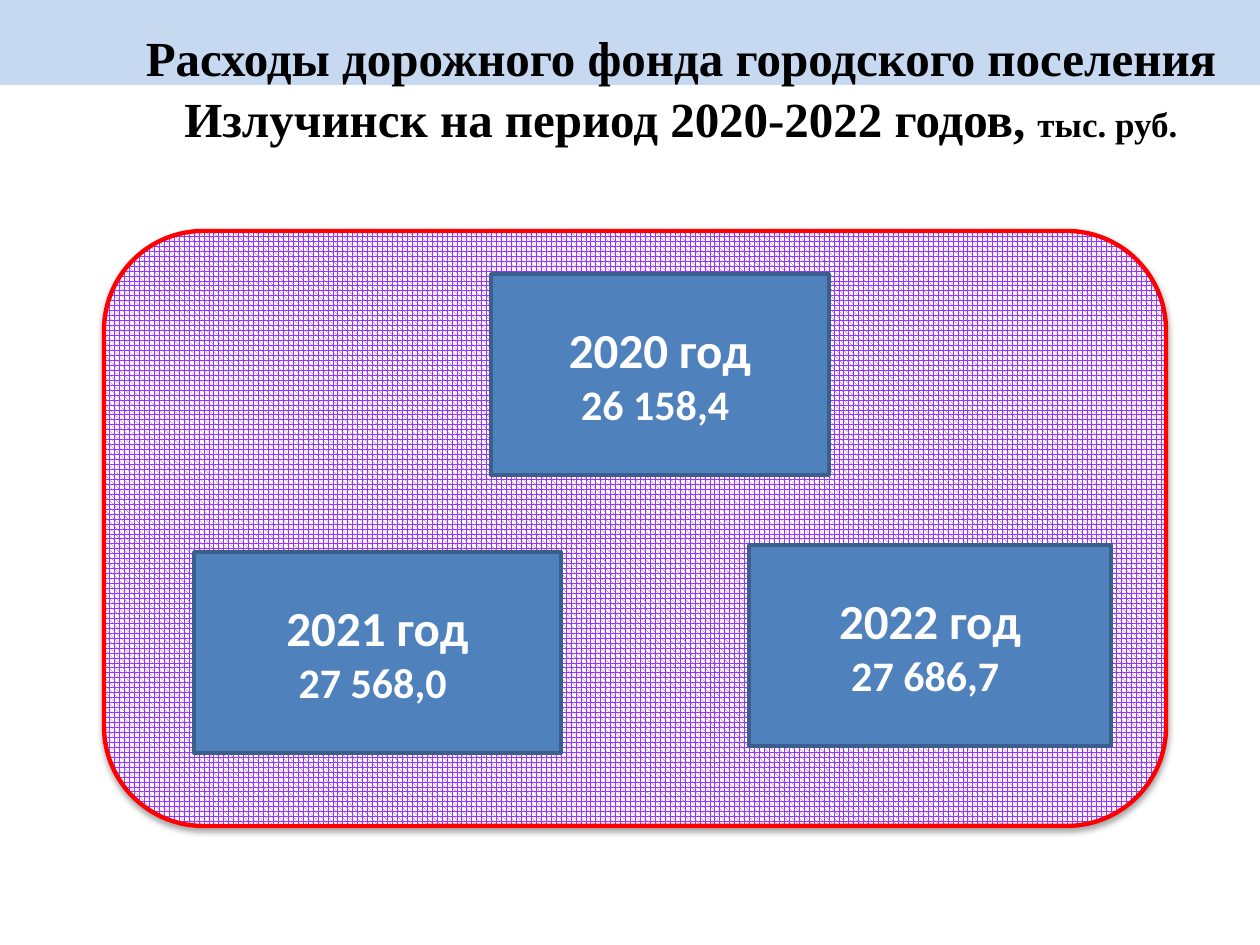
from lxml import etree
from pptx import Presentation
from pptx.dml.color import RGBColor
from pptx.enum.dml import MSO_PATTERN
from pptx.enum.shapes import MSO_SHAPE
from pptx.enum.text import MSO_ANCHOR, PP_ALIGN
from pptx.oxml import parse_xml
from pptx.util import Pt

RECTANGLE = MSO_SHAPE.RECTANGLE
ROUNDED = MSO_SHAPE.ROUNDED_RECTANGLE
SPHERE = MSO_PATTERN.SPHERE
MIDDLE = MSO_ANCHOR.MIDDLE
CENTER = PP_ALIGN.CENTER
EMU_PER_PX = 914400 / 126

COLORS = {
    "band": "C6D9F1",
    "pattern": "9933FF",
    "white": "FFFFFF",
    "black": "000000",
    "frame": "FF0000",
    "card": "4F81BD",
    "card_line": "3A5F8C",
}


def px(*lengths):
    return [round(length * EMU_PER_PX) for length in lengths]


def add_text(para, text, *, size, font, color):
    para.alignment = CENTER
    span = para.add_run()
    span.text = text
    span.font.size = Pt(size)
    span.font.name = font
    span.font.bold = True
    span.font.color.rgb = RGBColor.from_string(COLORS[color])


deck = Presentation()
deck.slide_width, deck.slide_height = px(1260, 945)
page = deck.slides.add_slide(deck.slide_layouts[6])

# Top band
band = page.shapes.add_shape(RECTANGLE, *px(0, 0, 1260, 85))
band.shadow.inherit = False
band.fill.solid()
band.fill.fore_color.rgb = RGBColor.from_string(COLORS["band"])
band.line.fill.background()

# Title
title = page.shapes.add_textbox(*px(114, 18, 1134, 158))
title.text_frame.word_wrap = True
para = title.text_frame.paragraphs[0]
para.line_spacing = 1.05
title_spans = [
    ("Расходы дорожного фонда городского поселения Излучинск на период 2020-2022 годов, ", 28),
    ("тыс. руб.", 20),
]
for text, size in title_spans:
    add_text(para, text, size=size, font="Times New Roman", color="black")

# Patterned frame with a soft shadow below
frame = page.shapes.add_shape(ROUNDED, *px(104, 231, 1062, 595))
frame.fill.patterned()
frame.fill.pattern = SPHERE
frame.fill.fore_color.rgb = RGBColor.from_string(COLORS["pattern"])
frame.fill.back_color.rgb = RGBColor.from_string(COLORS["white"])
frame.line.color.rgb = RGBColor.from_string(COLORS["frame"])
frame.line.width = Pt(2.5)
frame.shadow.inherit = False
effects = frame._element.spPr.find("{*}effectLst")
effects.append(parse_xml(
    '<a:outerShdw xmlns:a="http://schemas.openxmlformats.org/drawingml/2006/main"'
    f' blurRad="{Pt(3.1)}" dist="{Pt(1.8)}" dir="5400000" rotWithShape="0">'
    f'<a:srgbClr val="{COLORS["black"]}"><a:alpha val="35000"/></a:srgbClr>'
    '</a:outerShdw>'
))

# Year cards: year, amount, left, top, width
cards = [
    ("2020 год", "26 158,4 ", 491, 274, 338),
    ("2021 год", "27 568,0 ", 194, 552, 367),
    ("2022 год", "27 686,7 ", 749, 545, 362),
]
for year, amount, left, top, width in cards:
    card = page.shapes.add_shape(RECTANGLE, *px(left, top, width, 201))
    card.shadow.inherit = False
    card.fill.solid()
    card.fill.fore_color.rgb = RGBColor.from_string(COLORS["card"])
    card.line.color.rgb = RGBColor.from_string(COLORS["card_line"])
    card.line.width = Pt(2)
    box = card.text_frame
    box.word_wrap = True
    box.vertical_anchor = MIDDLE
    add_text(box.paragraphs[0], year, size=28, font="Calibri", color="white")
    add_text(box.add_paragraph(), amount, size=24, font="Calibri", color="white")

deck.save("out.pptx")
